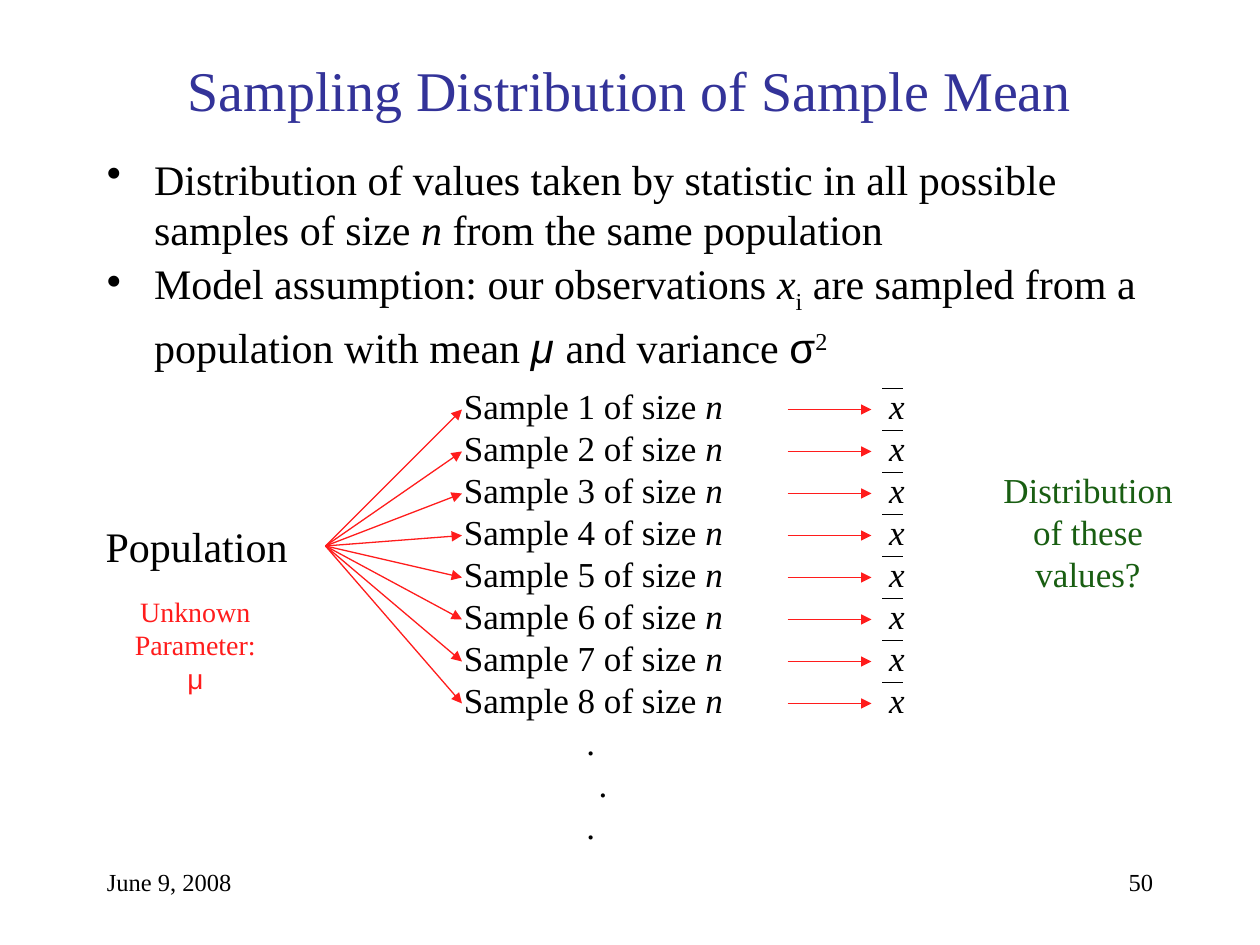
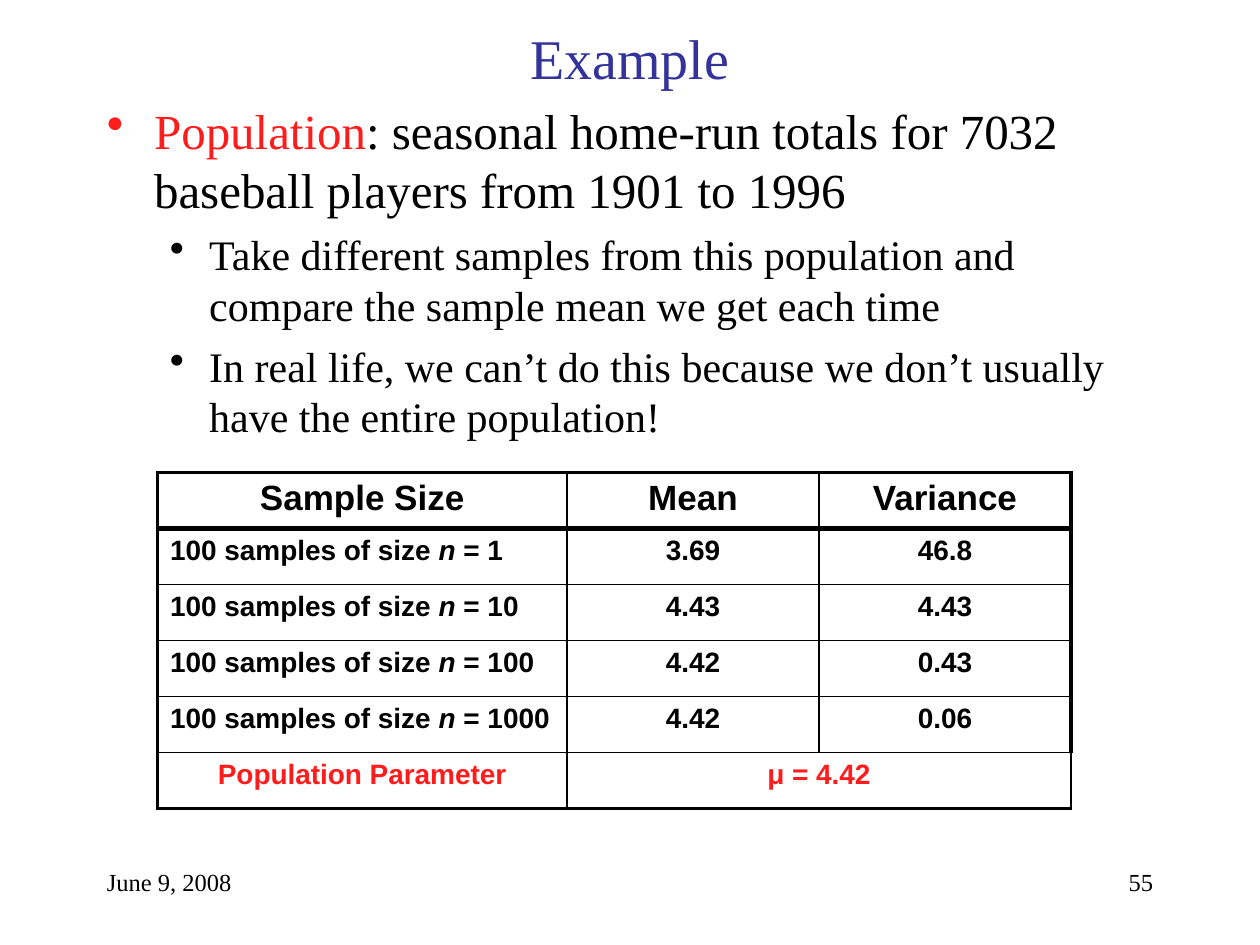
from pptx import Presentation
from pptx.dml.color import RGBColor
from pptx.enum.shapes import MSO_CONNECTOR
from pptx.enum.text import MSO_ANCHOR, PP_ALIGN
from pptx.oxml.ns import qn
from pptx.util import Pt
from lxml.etree import SubElement

BLACK = RGBColor(0x00, 0x00, 0x00)
BLUE = RGBColor(0x33, 0x33, 0x99)
RED = RGBColor(0xFF, 0x1C, 0x1C)
GREEN = RGBColor(0x19, 0x5E, 0x12)
SERIF = "Times New Roman"
SANS = "Arial"
LEFT, MID, RIGHT = PP_ALIGN.LEFT, PP_ALIGN.CENTER, PP_ALIGN.RIGHT
ITAL = {"italic": True}
LEAD = 1.2


class Deck:
    def __init__(self):
        self.prs = Presentation()
        self.prs.slide_width, self.prs.slide_height = Pt(720), Pt(540)
        self.slide = None

    def page(self, title, top, height, number):
        self.slide = self.prs.slides.add_slide(self.prs.slide_layouts[6])
        frame = self.text(54, top, 612, height, [title], 32, BLUE, MID)
        frame.vertical_anchor = MSO_ANCHOR.MIDDLE
        self.text(54, 492, 150, 36, ["June 9, 2008"], 14)
        self.text(516, 492, 150, 36, [number], 14, align=RIGHT)

    def frame(self, left, top, width, height):
        box = self.slide.shapes.add_textbox(Pt(left), Pt(top), Pt(width), Pt(height))
        box.text_frame.word_wrap = True
        return box.text_frame

    def para(self, frame, runs, size, color=BLACK, face=SERIF, align=LEFT,
             bold=False, lead=None, before=0, indent=None, dot=None, tab=None):
        para = frame.paragraphs[0]
        if para.runs:
            para = frame.add_paragraph()
        props = para._p.get_or_add_pPr()
        if indent:
            left, hang = indent
            props.set("marL", str(Pt(left)))
            props.set("indent", str(Pt(-hang)))
            tint = SubElement(props, qn("a:buClr"))
            SubElement(tint, qn("a:srgbClr"), val=str(dot or color))
            SubElement(props, qn("a:buChar"), char="•")
        if tab:
            tabs = SubElement(props, qn("a:tabLst"))
            SubElement(tabs, qn("a:tab"), pos=str(Pt(tab)), algn="l")
        para.alignment = align
        para.line_spacing = lead or Pt(size * LEAD)
        para.space_before = Pt(before)
        font = para.font
        font.size, font.name, font.bold = Pt(size), face, bold
        font.color.rgb = color
        for part in [runs] if isinstance(runs, str) else runs:
            words, style = (part, {}) if isinstance(part, str) else part
            run = para.add_run()
            run.text = words
            for key, value in style.items():
                if key == "shift":
                    run._r.get_or_add_rPr().set("baseline", str(value * 1000))
                elif key == "color":
                    run.font.color.rgb = value
                else:
                    setattr(run.font, key, value)

    def text(self, left, top, width, height, lines, size, color=BLACK, align=LEFT):
        frame = self.frame(left, top, width, height)
        for line in lines:
            self.para(frame, line, size, color, align=align)
        return frame

    def line(self, start, end, color=BLACK, arrow=False):
        line = self.slide.shapes.add_connector(
            MSO_CONNECTOR.STRAIGHT, *[Pt(n) for n in (*start, *end)])
        line.line.color.rgb = color
        line.line.width = Pt(0.75)
        if arrow:
            SubElement(line.line._get_or_add_ln(), qn("a:tailEnd"), type="triangle")
        SubElement(line._element.spPr, qn("a:effectLst"))

    def edges(self, cell, widths):
        props = cell._tc.get_or_add_tcPr()
        for side, width in zip("LRTB", widths):
            edge = SubElement(props, qn(f"a:ln{side}"), w=str(Pt(width)))
            fill = SubElement(edge, qn("a:solidFill"))
            SubElement(fill, qn("a:srgbClr"), val=str(BLACK))

    def table(self, left, top, cols, high, rows):
        shape = self.slide.shapes.add_table(
            len(rows), len(cols), Pt(left), Pt(top), Pt(sum(cols)), Pt(high * len(rows)))
        table = shape.table
        for col, width in zip(table.columns, cols):
            col.width = Pt(width)
        for row in table.rows:
            row.height = Pt(high)
        last, end = len(rows) - 1, len(cols) - 1
        for y, row in enumerate(rows):
            for x, runs in enumerate(row):
                cell = table.cell(y, x)
                above = {0: 2.25, 1: 3}.get(y, 1)
                below = {0: 3, last: 2.25}.get(y, 1)
                self.edges(cell, (1 if x else 2.25, 2.25 if x == end else 1, above, below))
                cell.fill.background()
                cell.margin_left = cell.margin_right = Pt(7.2)
                cell.margin_top, cell.margin_bottom = Pt(5), Pt(3.6)
                if runs:
                    self.para(cell.text_frame, runs, 16 if y else 20,
                              RED if y == last else BLACK, SANS,
                              LEFT if x == 0 and 0 < y < last else MID, True, 0.93)
        return table


def sample(deck):
    deck.page("Sampling Distribution of Sample Mean", 24, 54, "50")
    body = deck.frame(54, 84, 612, 390)
    deck.para(body, ["Distribution of values taken by statistic in all possible samples of size ",
                     ("n", ITAL), " from the same population"], 24, indent=(27, 27))
    deck.para(body, ["Model assumption: our observations ", ("x", ITAL), ("i", {"shift": -25}),
                     " are sampled from a population with mean ",
                     ("μ ", {"name": SANS, "italic": True}), "and variance ",
                     ("σ", {"name": SANS}), ("2", {"shift": 30})],
              24, lead=Pt(32.5), before=2.3, indent=(27, 27))
    deck.text(53.3, 294, 127.4, 36, ["Population"], 24)
    note = deck.text(62.6, 336, 98, 65, ["Unknown", "Parameter:"], 16, RED, MID)
    deck.para(note, "μ", 16, RED, SANS, MID)
    draws = deck.frame(258, 216, 294, 274)
    for i in range(8):
        deck.para(draws, [f"Sample {i + 1} of size ", ("n\tx", ITAL)], 20, tab=243)
        y = 234 + 24 * i
        deck.line((186, 312), (264, y), RED, True)
        deck.line((450, y), (498, y), RED, True)
        deck.line((504, y - 12), (516, y - 12))
    for tab in (70, 77, 70):
        deck.para(draws, "\t.", 20, tab=tab)
    deck.text(564.5, 264, 114.5, 79, ["Distribution", "of these", "values?"], 20, GREEN, MID)


def example(deck):
    deck.page("Example", 10, 45, "55")
    body = deck.frame(54, 54, 612, 414)
    deck.para(body, [("Population", {"color": RED}),
                     ": seasonal home-run totals for 7032 baseball players from 1901 to 1996"],
              28, indent=(27, 27), dot=RED)
    for line in ("Take different samples from this population and compare "
                 "the sample mean we get each time",
                 "In real life, we can’t do this because we don’t usually "
                 "have the entire population!"):
        deck.para(body, line, 24, before=6, indent=(58.5, 22.5))
    data = [(1, "3.69", "46.8"), (10, "4.43", "4.43"),
            (100, "4.42", "0.43"), (1000, "4.42", "0.06")]
    rows = [("Sample Size", "Mean", "Variance")]
    rows += [(["100 samples of size ", ("n", ITAL), f" = {n}"], mean, var)
             for n, mean, var in data]
    rows.append(("Population Parameter", "μ = 4.42", None))
    table = deck.table(90, 270, (234, 144, 144), 32, rows)
    table.cell(5, 1).merge(table.cell(5, 2))


def main():
    deck = Deck()
    sample(deck)
    example(deck)
    deck.prs.save("out.pptx")


if __name__ == "__main__":
    main()
